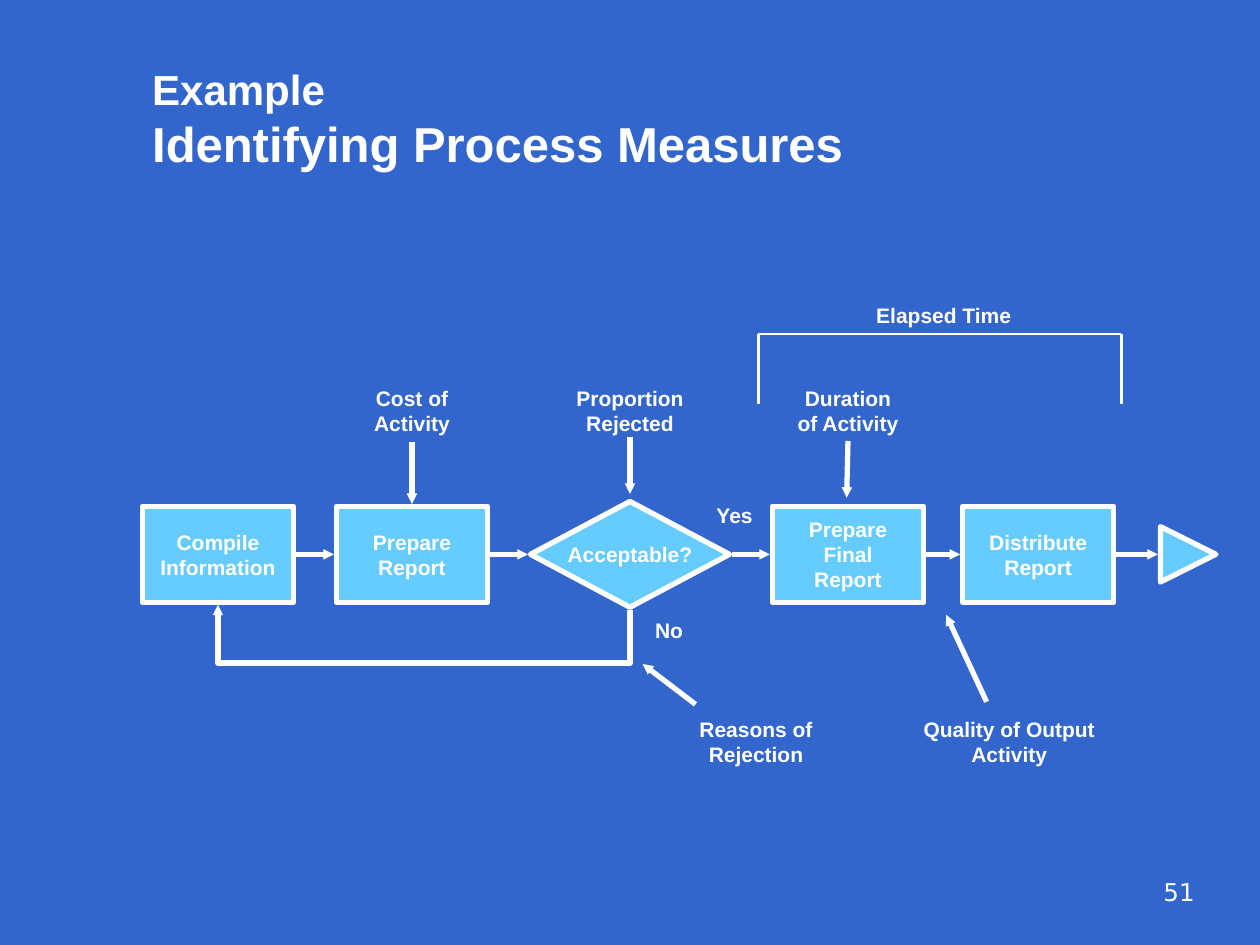
from dataclasses import dataclass

from pptx import Presentation
from pptx.dml.color import RGBColor
from pptx.enum.shapes import MSO_CONNECTOR, MSO_SHAPE
from pptx.enum.text import MSO_ANCHOR, PP_ALIGN
from pptx.oxml.ns import qn
from pptx.oxml.xmlchemy import OxmlElement
from pptx.util import Inches, Pt

COLORS = {"background": "3366CC", "step": "66CCFF", "white": "FFFFFF"}
COLUMNS, ROWS = 100, 75          # grid of the 10 x 7.5 inch slide
CELL = Inches(0.1)
LABEL_FONT = {"name": "Arial", "size": Pt(12), "bold": True}
PAGE_FONT = {"name": "DejaVu Sans", "size": Pt(14)}
STEP_WIDTH = 12


@dataclass
class Box:
    """An area in grid cells."""
    left: float
    top: float
    width: float
    height: float

    def area(self, x, y, width, height):
        return Box(self.left + x, self.top + y, width, height)

    def point(self, x, y):
        return self.left + x, self.top + y

    def emu(self):
        return [grid(v) for v in (self.left, self.top, self.width, self.height)]


def grid(cells):
    return int(round(cells * CELL))


def color(name):
    return RGBColor.from_string(COLORS[name])


def style(font, values):
    for attribute, value in values.items():
        setattr(font, attribute, value)
    font.color.rgb = color("white")


def add_text(slide, box, text, font=LABEL_FONT, align=PP_ALIGN.CENTER):
    frame = slide.shapes.add_textbox(*box.emu()).text_frame
    frame.word_wrap = True
    frame.text = text
    for paragraph in frame.paragraphs:
        paragraph.alignment = align
        style(paragraph.font, font)
    return frame


def add_label(slide, box, center, top, width, text, lines=2):
    """Label of a number of lines, centred on a column of the box."""
    add_text(slide, box.area(center - width / 2, top, width, 1 + 2 * lines), text)


def add_block(slide, box, preset):
    block = slide.shapes.add_shape(preset, *box.emu())
    block.shadow.inherit = False
    block.fill.solid()
    block.fill.fore_color.rgb = color("step")
    block.line.color.rgb = color("white")
    block.line.width = Pt(3)
    return block


def add_line(slide, start, end, width=3, arrow=True, kind=MSO_CONNECTOR.STRAIGHT):
    ends = [grid(v) for v in (*start, *end)]
    line = slide.shapes.add_connector(kind, *ends)
    line.line.color.rgb = color("white")
    line.line.width = Pt(width)
    properties = line._element.spPr
    if arrow:
        head = OxmlElement("a:tailEnd")
        for key, value in {"type": "triangle", "w": "sm", "len": "sm"}.items():
            head.set(key, value)
        properties.find(qn("a:ln")).append(head)
    properties.append(OxmlElement("a:effectLst"))
    return line


def add_title(slide, box):
    frame = add_text(slide, box, "", align=PP_ALIGN.LEFT)
    frame.vertical_anchor = MSO_ANCHOR.BOTTOM
    heading = frame.paragraphs[0]
    for text, size in (("Example", 24), ("Identifying Process Measures", 28)):
        if heading.runs:
            heading.add_line_break()
        run = heading.add_run()
        run.text = text
        style(run.font, {**LABEL_FONT, "size": Pt(size)})


def add_rework_loop(slide, start, end, drop):
    """Elbow arrow that leaves downwards, runs back and rises to its end."""
    loop = add_line(slide, start, end, kind=MSO_CONNECTOR.ELBOW)
    rise, run = start[1] - end[1], start[0] - end[0]
    loop.left = grid((start[0] + end[0] - rise) / 2)
    loop.top = grid((start[1] + end[1] - run) / 2)
    loop.width, loop.height = grid(rise), grid(run)
    frame = loop._element.spPr.find(qn("a:xfrm"))
    for flag in ("flipH", "flipV"):
        frame.attrib.pop(flag, None)
    frame.set("rot", str(270 * 60000))
    frame.set("flipV", "1")
    guide = OxmlElement("a:gd")
    guide.set("name", "adj1")
    guide.set("fmla", f"val {round(-drop / rise * 100000)}")
    geometry = loop._element.spPr.find(qn("a:prstGeom"))
    adjustments = geometry.find(qn("a:avLst"))
    if adjustments is None:
        adjustments = OxmlElement("a:avLst")
        geometry.append(adjustments)
    adjustments.append(guide)


def add_process(slide, box):
    axis = box.height / 2
    # Activities: left column, text, number of lines
    for left, text, lines in (
        (0, "Compile Information", 2),
        (15.4, "Prepare\nReport", 2),
        (50, "Prepare\nFinal Report", 3),
        (65.1, "Distribute\nReport", 2),
    ):
        add_block(slide, box.area(left, 0, STEP_WIDTH, box.height), MSO_SHAPE.RECTANGLE)
        add_label(slide, box, left + STEP_WIDTH / 2, axis - 0.5 - lines,
                  11.5, text, lines)

    # Decision and end marker
    add_block(slide, box.area(30.8, axis - 4.2, 15.8, 8.4), MSO_SHAPE.DIAMOND)
    add_label(slide, box, 38.7, axis - 1.5, 12.9, "Acceptable?", 1)
    marker = add_block(slide, box.area(80.8, axis - 2.2, 4.4, 4.4),
                       MSO_SHAPE.FLOWCHART_EXTRACT)
    marker.rotation = 90

    # Flow from step to step
    for start, end in ((12.1, 15.2), (27.6, 30.6), (46.8, 49.8),
                       (62.1, 64.9), (77.3, 80.6)):
        add_line(slide, box.point(start, axis), box.point(end, axis))

    # Outcomes of the decision
    add_label(slide, box, 47, -0.8, 5.4, "Yes", 1)
    add_label(slide, box, 41.8, 8.3, 5.4, "No", 1)
    add_rework_loop(slide, box.point(38.7, 8.2), box.point(6, 7.8), 4.2)


def add_measures(slide, box):
    """Measures around the process, placed from the process box."""
    # Label centre, top, width, text, then arrow start and end
    for center, top, width, text, start, end in (
        (21.4, -10.1, 11.5, "Cost of\nActivity", (21.4, -5.1), (21.4, -0.2)),
        (38.7, -10.1, 12.9, "Proportion\nRejected", (38.7, -5.5), (38.7, -1)),
        (56, -10.1, 11.5, "Duration\nof Activity", (56, -5.2), (55.9, -0.7)),
        (48.7, 16.2, 11.5, "Reasons of Rejection", (43.9, 15.7), (39.7, 12.5)),
        (68.8, 16.2, 15.8, "Quality of Output Activity", (67, 15.5), (63.8, 8.6)),
    ):
        add_label(slide, box, center, top, width, text)
        add_line(slide, box.point(*start), box.point(*end))

    # Elapsed time bracket
    left, right, top, foot = 48.9, 77.7, -13.7, -8.1
    for start, end in (((left, top), (left, foot)),
                       ((right, top), (right, foot)),
                       ((left, top), (right, top))):
        add_line(slide, box.point(*start), box.point(*end), width=1.5, arrow=False)
    add_label(slide, box, 63.6, -16.7, 26.8, "Elapsed Time", 1)


def add_page_number(slide, box):
    add_text(slide, box, "51", PAGE_FONT, PP_ALIGN.RIGHT)


def main():
    deck = Presentation()
    deck.slide_width, deck.slide_height = grid(COLUMNS), grid(ROWS)
    slide = deck.slides.add_slide(deck.slide_layouts[6])
    slide.background.fill.solid()
    slide.background.fill.fore_color.rgb = color("background")

    process = Box(11.3, 40.2, 85.2, 7.6)
    add_title(slide, Box(11.1, 1.7, 85, 12.5))
    add_process(slide, process)
    add_measures(slide, process)
    add_page_number(slide, Box(75, 69.1, 20.8, 5))
    deck.save("out.pptx")


if __name__ == "__main__":
    main()
